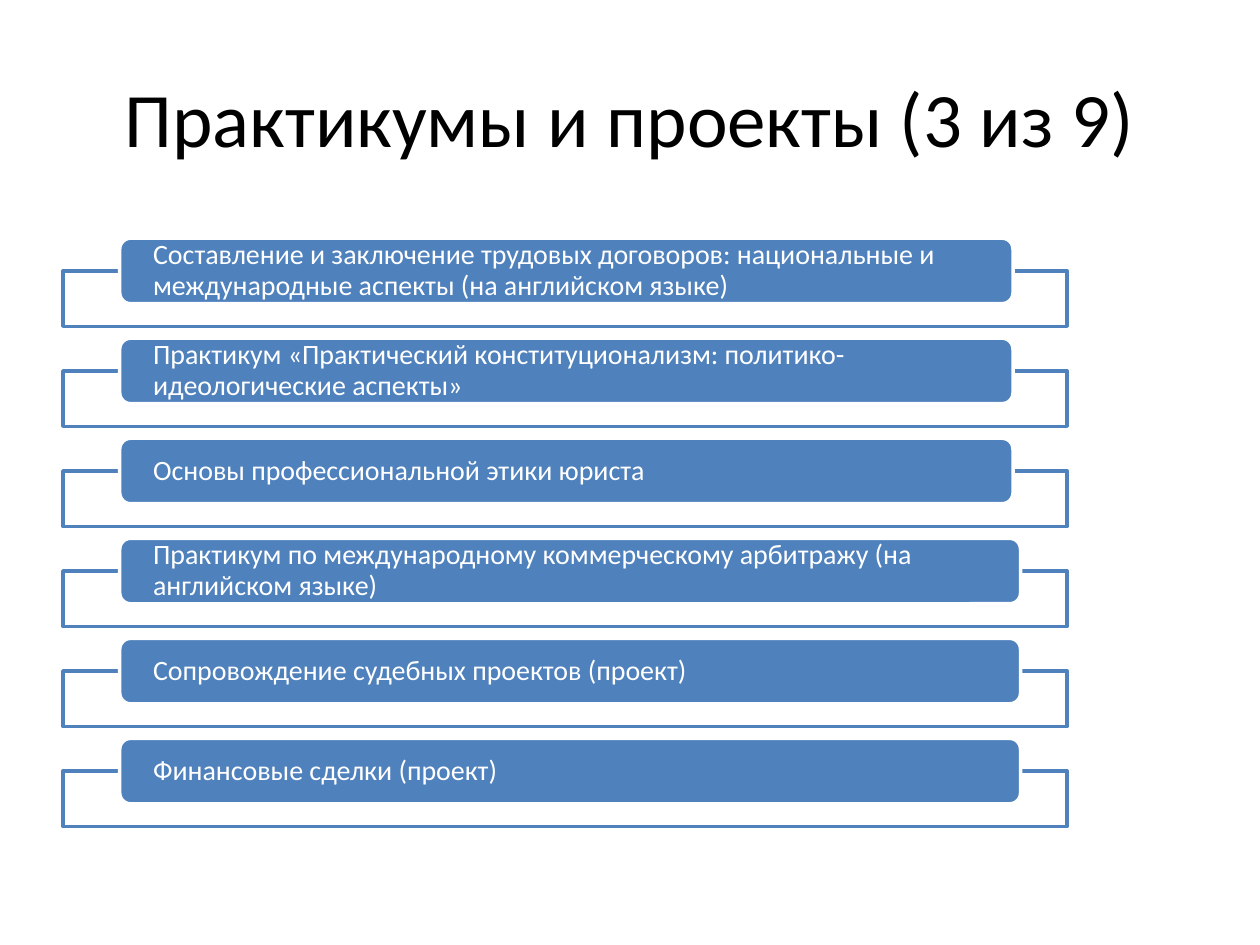
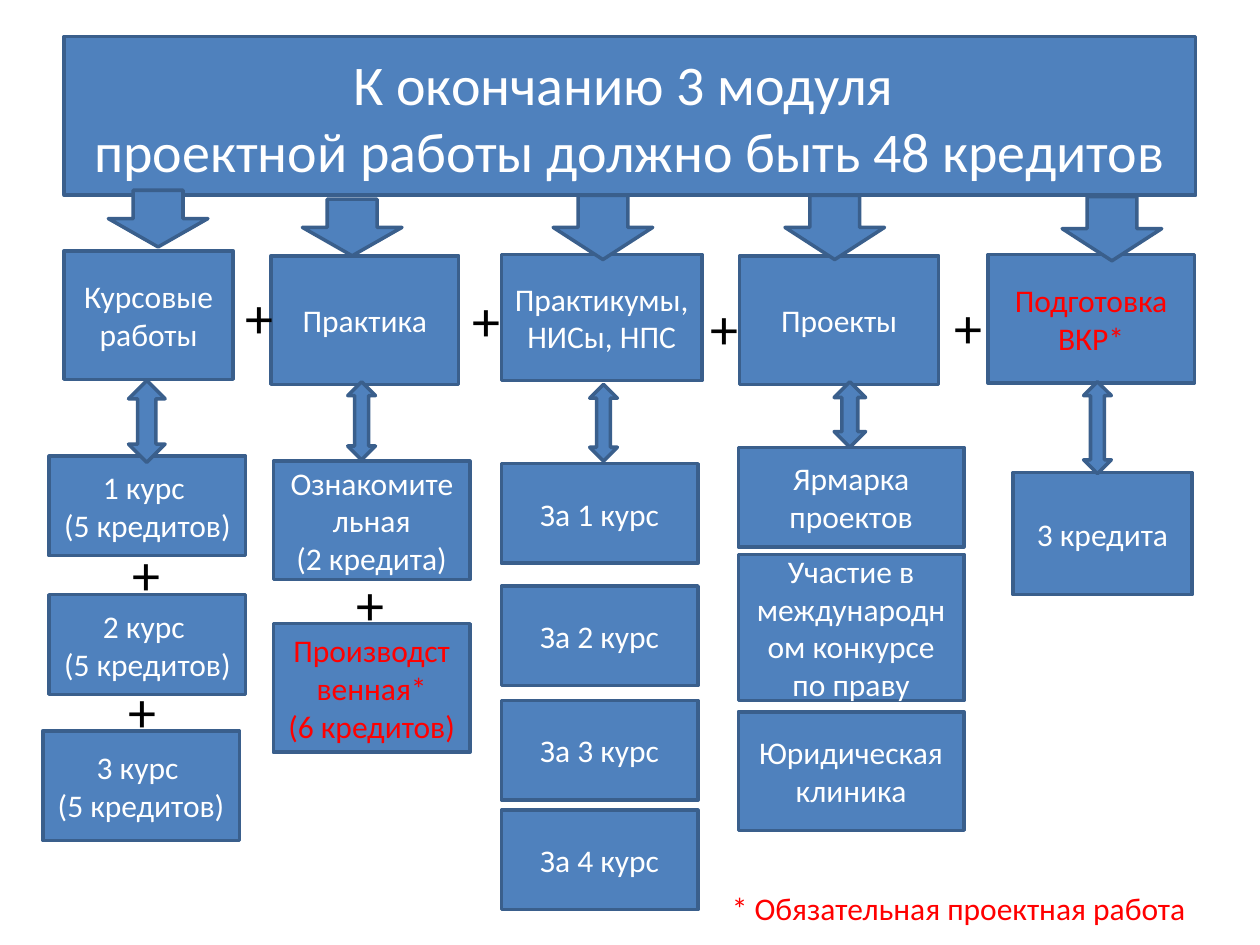
from dataclasses import dataclass
from typing import NamedTuple

from pptx import Presentation
from pptx.dml.color import RGBColor
from pptx.enum.shapes import MSO_SHAPE
from pptx.enum.text import MSO_ANCHOR, MSO_AUTO_SIZE, PP_ALIGN
from pptx.oxml.ns import qn
from pptx.util import Inches, Pt
from lxml import etree


@dataclass(frozen=True)
class Theme:
    font: str = "Calibri"
    blue: str = "4F81BD"
    outline: str = "3A5F8C"
    white: str = "FFFFFF"
    black: str = "000000"
    red: str = "FF0000"
    title_size: int = 44
    banner_size: int = 32
    plus_size: int = 32
    card_size: int = 18
    bar_size: int = 16
    line_width: int = 2


THEME = Theme()
TITLE_AREA = (0.5, 0.3, 9, 1.25)
BANNER_AREA = (0.51, 0.29, 8.98, 1.26)

COURSES = [
    "Составление и заключение трудовых договоров: национальные и международные аспекты (на английском языке)",
    "Практикум «Практический конституционализм: политико-идеологические аспекты»",
    "Основы профессиональной этики юриста",
    "Практикум по международному коммерческому арбитражу (на английском языке)",
    "Сопровождение судебных проектов (проект)",
    "Финансовые сделки (проект)",
]
FIRST_BAR_TOP, LAST_BAR_TOP = 1.89, 5.86
NARROW_BARS = 3


class Card(NamedTuple):
    text: str
    area: tuple


class Column(NamedTuple):
    head: Card
    down_arrow: tuple
    link_arrow: tuple
    cards: list


def stack(left, width, *rows):
    return [Card(text, (left, top, width, height)) for text, top, height in rows]


COLUMNS = [
    Column(
        Card("Курсовые работы", (0.51, 1.99, 1.34, 1.02)),
        (0.86, 1.51, 0.79, 0.45),
        (1.02, 3.02, 0.29, 0.65),
        stack(0.39, 1.56,
              ("1 курс \n(5 кредитов)", 3.62, 0.79),
              ("2 курс \n(5 кредитов)", 4.72, 0.79))
        + stack(0.34, 1.56, ("3 курс \n(5 кредитов)", 5.8, 0.87)),
    ),
    Column(
        Card("Практика", (2.15, 2.03, 1.49, 1.02)),
        (2.4, 1.58, 0.79, 0.45),
        (2.76, 3.03, 0.22, 0.62),
        stack(2.17, 1.56,
              ("Ознакомительная\n(2 кредита)", 3.66, 0.94),
              ("Производственная*\n(6 кредитов)", 4.95, 1.02)),
    ),
    Column(
        Card("Практикумы, НИСы, НПС", (3.98, 2.02, 1.59, 1)),
        (4.39, 1.55, 0.79, 0.51),
        (4.68, 3.05, 0.22, 0.61),
        stack(3.98, 1.56,
              ("За 1 курс", 3.68, 0.79),
              ("За 2 курс", 4.65, 0.79),
              ("За 3 курс", 5.56, 0.79),
              ("За 4 курс", 6.43, 0.79)),
    ),
    Column(
        Card("Проекты", (5.87, 2.03, 1.58, 1.02)),
        (6.23, 1.55, 0.79, 0.51),
        (6.62, 3.03, 0.25, 0.52),
        stack(5.86, 1.79,
              ("Ярмарка проектов", 3.55, 0.79),
              ("Участие в международном конкурсе по праву", 4.4, 1.16),
              ("Юридическая клиника", 5.65, 0.94)),
    ),
    Column(
        Card("Подготовка ВКР*", (7.84, 2.02, 1.64, 1.02)),
        (8.43, 1.56, 0.79, 0.51),
        (8.6, 3.03, 0.22, 0.73),
        stack(8.04, 1.42, ("3 кредита", 3.75, 0.97)),
    ),
]

PLUS_POSITIONS = [
    (1.85, 2.19), (3.65, 2.22), (5.54, 2.28), (7.48, 2.27),
    (0.95, 4.23), (0.92, 5.32), (2.73, 4.47),
]


def to_lengths(area):
    return [Inches(value) for value in area]


def color(value):
    return RGBColor.from_string(value)


def add_span(para, text, size, tint):
    span = para.add_run()
    span.text = text
    span.font.name = THEME.font
    span.font.size = Pt(size)
    span.font.color.rgb = color(tint)


def write_paragraphs(frame, text, size, tint, align):
    frame.word_wrap = True
    for index, line in enumerate(text.split("\n")):
        para = frame.add_paragraph() if index else frame.paragraphs[0]
        para.alignment = align
        add_span(para, line, size, tint)


def add_box(page, preset, area, fill=THEME.blue, outline=THEME.outline):
    box = page.shapes.add_shape(preset, *to_lengths(area))
    box.shadow.inherit = False
    box.fill.solid()
    box.fill.fore_color.rgb = color(fill)
    box.line.color.rgb = color(outline)
    box.line.width = Pt(THEME.line_width)
    return box


def add_title(page, lines, size, tint):
    title = page.shapes.title
    title.left, title.top, title.width, title.height = to_lengths(TITLE_AREA)
    frame = title.text_frame
    frame.auto_size = MSO_AUTO_SIZE.NONE
    frame.vertical_anchor = MSO_ANCHOR.MIDDLE
    para = frame.paragraphs[0]
    para.alignment = PP_ALIGN.CENTER
    for index, line in enumerate(lines):
        if index:
            para.add_line_break()
        add_span(para, line, size, tint)


def add_banner(page):
    banner = add_box(page, MSO_SHAPE.FLOWCHART_PROCESS, BANNER_AREA)
    page.shapes.title.element.addprevious(banner.element)


def add_course(page, text, top, width):
    frame_box = add_box(page, MSO_SHAPE.RECTANGLE, (0.5, top + 0.26, 7.97, 0.44),
                        THEME.white, THEME.blue)
    fill_color = frame_box.element.spPr.find(qn("a:solidFill"))[0]
    etree.SubElement(fill_color, qn("a:alpha")).set("val", "90000")
    bar = add_box(page, MSO_SHAPE.ROUNDED_RECTANGLE, (0.95, top, width, 0.52),
                  THEME.blue, THEME.white)
    frame = bar.text_frame
    frame.margin_left = frame.margin_right = Inches(0.24)
    frame.margin_top = frame.margin_bottom = 0
    frame.vertical_anchor = MSO_ANCHOR.MIDDLE
    write_paragraphs(frame, text, THEME.bar_size, THEME.white, PP_ALIGN.LEFT)
    frame.paragraphs[0].line_spacing = 0.9


def add_card(page, card):
    box = add_box(page, MSO_SHAPE.FLOWCHART_PROCESS, card.area)
    box.text_frame.vertical_anchor = MSO_ANCHOR.MIDDLE
    tint = THEME.red if "*" in card.text else THEME.white
    write_paragraphs(box.text_frame, card.text, THEME.card_size, tint, PP_ALIGN.CENTER)


def add_label(page, text, area, size, tint):
    label = page.shapes.add_textbox(*to_lengths(area))
    write_paragraphs(label.text_frame, text, size, tint, PP_ALIGN.LEFT)
    label.text_frame.auto_size = MSO_AUTO_SIZE.SHAPE_TO_FIT_TEXT


def add_column(page, column):
    for card in [column.head, *column.cards]:
        add_card(page, card)
    add_box(page, MSO_SHAPE.DOWN_ARROW, column.down_arrow)
    add_box(page, MSO_SHAPE.UP_DOWN_ARROW, column.link_arrow)


def build_courses(page):
    add_title(page, ["Практикумы и проекты (3 из 9)"], THEME.title_size, THEME.black)
    pitch = (LAST_BAR_TOP - FIRST_BAR_TOP) / (len(COURSES) - 1)
    for index, course in enumerate(COURSES):
        width = 7.09 if index < NARROW_BARS else 7.15
        add_course(page, course, FIRST_BAR_TOP + index * pitch, width)


def build_credits(page):
    add_title(page, ["К окончанию 3 модуля ", "проектной работы должно быть 48 кредитов"],
              THEME.banner_size, THEME.white)
    add_banner(page)
    for column in COLUMNS:
        add_column(page, column)
    for left, top in PLUS_POSITIONS:
        add_label(page, "+", (left, top, 0.36, 0.64), THEME.plus_size, THEME.black)
    add_label(page, "* Обязательная проектная работа", (5.71, 7.01, 4.67, 0.4),
              THEME.card_size, THEME.red)


def main():
    deck = Presentation()
    deck.slide_width, deck.slide_height = Inches(10), Inches(7.5)
    title_only = deck.slide_layouts[5]
    for build in (build_courses, build_credits):
        build(deck.slides.add_slide(title_only))
    deck.save("out.pptx")


if __name__ == "__main__":
    main()
